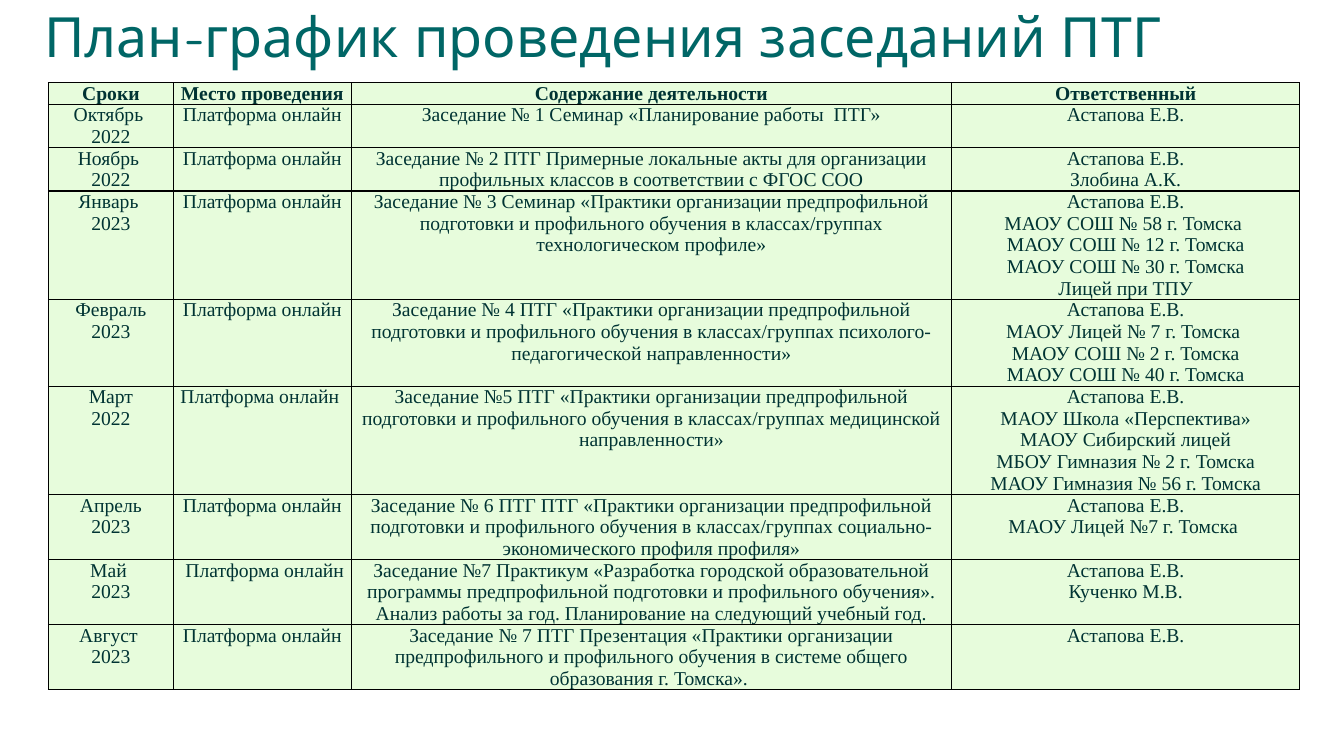
import pptx
import pptx.dml.color
import pptx.enum.text
import pptx.oxml
import pptx.oxml.ns
import pptx.util

HEADING = "План-график проведения заседаний ПТГ"
COLUMNS = ["Сроки", "Место проведения", "Содержание деятельности", "Ответственный"]
PLATFORM = "Платформа онлайн"
LEADER = "Астапова Е.В."
MEETINGS = [
    (2, "Октябрь \n2022", PLATFORM,
     "Заседание № 1 Семинар «Планирование работы  ПТГ»", [LEADER]),
    (2, "Ноябрь \n2022", PLATFORM,
     "Заседание № 2 ПТГ Примерные локальные акты для организации "
     "профильных классов в соответствии с ФГОС СОО",
     [LEADER, "Злобина А.К."]),
    (5, "Январь \n2023", PLATFORM,
     "Заседание № 3 Семинар «Практики организации предпрофильной подготовки "
     "и профильного обучения в классах/группах технологическом профиле»",
     [LEADER, "МАОУ СОШ № 58 г. Томска ", "МАОУ СОШ № 12 г. Томска",
      "МАОУ СОШ № 30 г. Томска", "Лицей при ТПУ"]),
    (4, "Февраль\n2023", PLATFORM,
     "Заседание № 4 ПТГ «Практики организации предпрофильной подготовки и профильного "
     "обучения в классах/группах психолого-педагогической направленности»",
     [LEADER, "МАОУ Лицей № 7 г. Томска ", "МАОУ СОШ № 2 г. Томска",
      "МАОУ СОШ № 40 г. Томска"]),
    (5, "Март\n2022", PLATFORM + " ",
     "Заседание №5 ПТГ «Практики организации предпрофильной подготовки и профильного "
     "обучения в классах/группах медицинской направленности»",
     [LEADER, "МАОУ Школа «Перспектива»", "МАОУ Сибирский лицей",
      "МБОУ Гимназия № 2 г. Томска", "МАОУ Гимназия № 56 г. Томска"]),
    (3, "Апрель\n2023", PLATFORM,
     "Заседание № 6 ПТГ ПТГ «Практики организации предпрофильной подготовки и профильного "
     "обучения в классах/группах социально-экономического профиля профиля»",
     [LEADER, "МАОУ Лицей №7 г. Томска "]),
    (3, "Май \n2023", " " + PLATFORM,
     "Заседание №7 Практикум «Разработка городской образовательной программы "
     "предпрофильной подготовки и профильного обучения». Анализ работы за год. "
     "Планирование на следующий учебный год.",
     [LEADER, "Кученко М.В."]),
    (3, "Август \n2023", PLATFORM,
     "Заседание № 7 ПТГ Презентация «Практики организации предпрофильного и "
     "профильного обучения в системе общего образования г. Томска». ",
     [LEADER]),
]

THEME = {
    "heading": {"name": "Quicksand", "size": pptx.util.Pt(39.6), "bold": False},
    "cell": {"name": "Times New Roman", "size": pptx.util.Pt(14)},
    "heading_ink": "006666",
    "cell_ink": "003333",
    "cell_fill": "E7FCDC",
    "paper": "FFFFFF",
    "rule": "000000",
}
SLIDE_SIZE = (13.33, 7.5)
HEADING_PERCENT = (2.55, 1.87, 93.4, 6.8)
SCHEDULE_PERCENT = (3.6, 10.93, 93.1, 80)
COLUMN_PERCENT = (10, 14.2, 48, 27.8)
LINE_HEIGHT = pptx.util.Inches(0.21)
SIDE_MARGIN = pptx.util.Inches(0.04)
CELL_FORMAT = {"margin_left": SIDE_MARGIN, "margin_right": SIDE_MARGIN,
               "margin_top": 0, "margin_bottom": 0}
PLAIN_TABLE = {"first_row": False, "horz_banding": False}


def assign(target, values):
    for key, value in values.items():
        setattr(target, key, value)


def paint(fill, color):
    fill.solid()
    fill.fore_color.rgb = pptx.dml.color.RGBColor.from_string(color)


def style_font(font, values, color):
    assign(font, values)
    font.color.rgb = pptx.dml.color.RGBColor.from_string(color)


def frame(percent):
    return [pptx.util.Inches(SLIDE_SIZE[i % 2] * share / 100)
            for i, share in enumerate(percent)]


def rule_cell(cell):
    properties = cell._tc.get_or_add_tcPr()
    for side in ("lnL", "lnR", "lnT", "lnB"):
        properties.append(pptx.oxml.parse_xml(
            f'<a:{side} {pptx.oxml.ns.nsdecls("a")} w="12700"><a:solidFill>'
            f'<a:srgbClr val="{THEME["rule"]}"/></a:solidFill></a:{side}>'))


def fill_cell(cell, content, bold):
    cell.text = content
    assign(cell, CELL_FORMAT)
    rule_cell(cell)
    paint(cell.fill, THEME["cell_fill"])
    for paragraph in cell.text_frame.paragraphs:
        paragraph.alignment = pptx.enum.text.PP_ALIGN.CENTER
        for run in paragraph.runs:
            style_font(run.font, THEME["cell"] | {"bold": bold}, THEME["cell_ink"])


def add_heading(slide):
    heading = slide.shapes.title
    assign(heading, dict(zip(("left", "top", "width", "height"), frame(HEADING_PERCENT))))
    paint(heading.fill, THEME["paper"])
    heading.text = HEADING
    assign(heading.text_frame, {
        "auto_size": pptx.enum.text.MSO_AUTO_SIZE.NONE,
        "vertical_anchor": pptx.enum.text.MSO_ANCHOR.MIDDLE,
        "word_wrap": True,
    })
    line = heading.text_frame.paragraphs[0]
    assign(line, {"alignment": pptx.enum.text.PP_ALIGN.LEFT, "line_spacing": 0.9})
    style_font(line.runs[0].font, THEME["heading"], THEME["heading_ink"])


def add_schedule(slide):
    rows = [(1, COLUMNS)] + [
        (lines, [month, place, topic, "\n".join(people)])
        for lines, month, place, topic, people in MEETINGS]
    left, top, width, _ = frame(SCHEDULE_PERCENT)
    height = LINE_HEIGHT * sum(lines for lines, _ in rows)
    schedule = slide.shapes.add_table(
        len(rows), len(COLUMNS), left, top, width, height).table
    assign(schedule, PLAIN_TABLE)
    for column, share in zip(schedule.columns, COLUMN_PERCENT):
        column.width = int(width * share / 100)
    for index, (lines, contents) in enumerate(rows):
        schedule.rows[index].height = LINE_HEIGHT * lines
        for cell, content in zip(schedule.rows[index].cells, contents):
            fill_cell(cell, content, index == 0)


def main():
    deck = pptx.Presentation()
    deck.slide_width, deck.slide_height = map(pptx.util.Inches, SLIDE_SIZE)
    slide = deck.slides.add_slide(deck.slide_layouts[5])
    paint(slide.background.fill, THEME["paper"])
    add_heading(slide)
    add_schedule(slide)
    deck.save("out.pptx")


if __name__ == "__main__":
    main()
